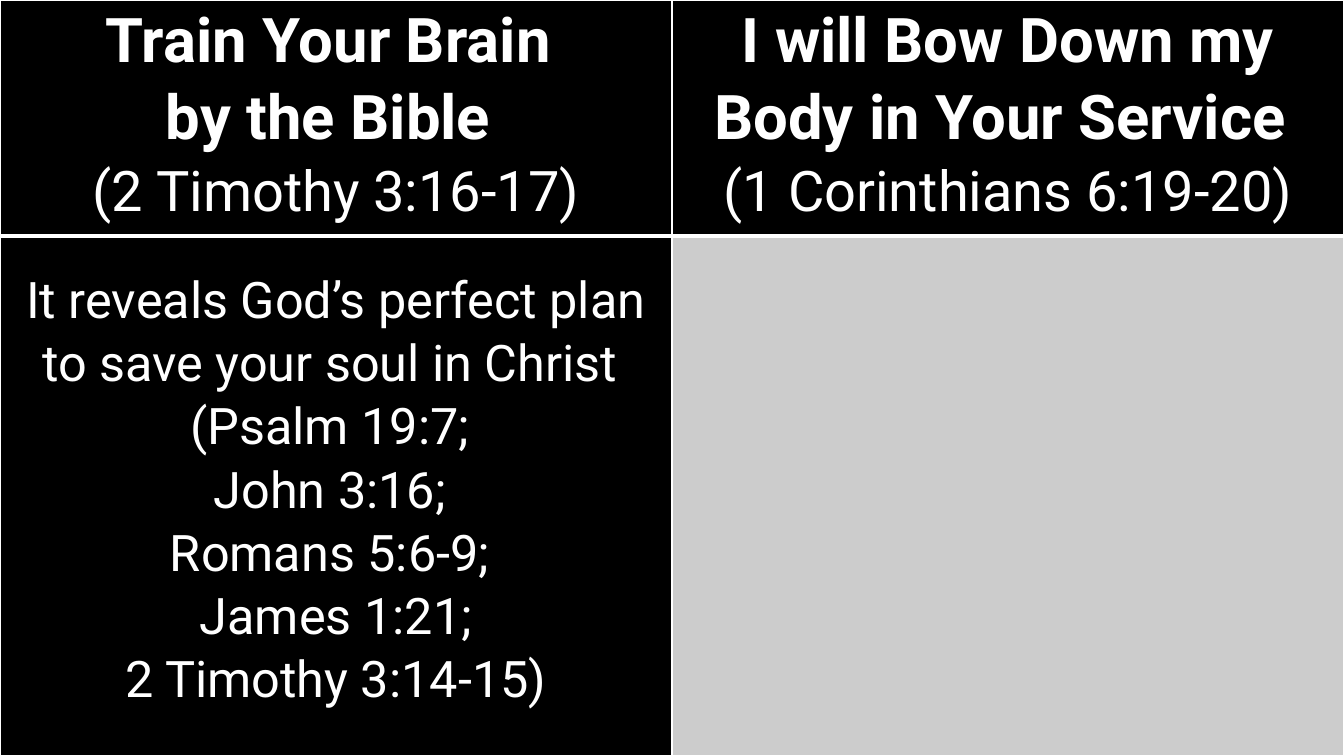
import pptx
import pptx.util
import pptx.dml.color
import pptx.enum.text
import pptx.oxml

# Content: rows of cells, each cell a list of (text, style)
ROWS = [
    [
        [("Train Your Brain ", "head"),
         ("by the Bible ", "head"),
         ("(2 Timothy 3:16-17)", "verse")],
        [("I will Bow Down my Body in Your Service ", "head"),
         ("(1 Corinthians 6:19-20)", "verse")],
    ],
    [
        [("It reveals God’s perfect plan to save your soul in Christ ", "body"),
         ("(Psalm 19:7; ", "body"),
         ("John 3:16; ", "body"),
         ("Romans 5:6-9; ", "body"),
         ("James 1:21;", "body"),
         ("2 Timothy 3:14-15)", "body")],
        [],
    ],
]

# Theme and sizes in px
THEME = {
    "font": "Roboto", "ink": "FFFFFF", "back": "000000", "blank": "CCCCCC",
    "head": (44, True), "verse": (40, False), "body": (36, False),
    "thin": 1, "thick": 3, "lead": 1.07,
}
WIDE, HIGH = 1344, 756
TOPS = [236, HIGH - 236]
PADS = [0, 32]
SIDE = 7
SCALE = 12192000 / WIDE


def px(n):
    return pptx.util.Emu(round(n * SCALE))


def color(name):
    return pptx.dml.color.RGBColor.from_string(THEME[name])


def paint(fill, name):
    fill.solid()
    fill.fore_color.rgb = color(name)


def assign(item, values):
    for key, value in values.items():
        setattr(item, key, value)


def edge(cell, row):
    """Draw the four cell borders, thick between the two rows."""
    props = cell._tc.get_or_add_tcPr()
    heavy = "B" if row == 0 else "T"
    for i, side in enumerate("LRTB"):
        size = THEME["thick" if side == heavy else "thin"]
        props.insert(i, pptx.oxml.parse_xml(
            f'<a:ln{side} xmlns:a="http://schemas.openxmlformats.org/drawingml/2006/main"'
            f' w="{pptx.util.Pt(size)}"><a:solidFill><a:srgbClr val="{THEME["ink"]}"/>'
            f'</a:solidFill></a:ln{side}>'))


def write(cell, lines):
    for i, (text, style) in enumerate(lines):
        para = cell.text_frame.paragraphs[0] if i == 0 else cell.text_frame.add_paragraph()
        assign(para, {"alignment": pptx.enum.text.PP_ALIGN.CENTER,
                      "line_spacing": THEME["lead"]})
        run = para.add_run()
        run.text = text
        size, bold = THEME[style]
        assign(run.font, {"name": THEME["font"], "size": pptx.util.Pt(size), "bold": bold})
        run.font.color.rgb = color("ink")


def main():
    deck = pptx.Presentation()
    assign(deck, {"slide_width": px(WIDE), "slide_height": px(HIGH)})
    slide = deck.slides.add_slide(deck.slide_layouts[6])
    paint(slide.background.fill, "back")

    # Table grid
    count = len(ROWS[0])
    table = slide.shapes.add_table(len(ROWS), count, 0, 0, px(WIDE), px(HIGH)).table
    assign(table, {"first_row": False, "horz_banding": False})
    for col in table.columns:
        col.width = px(WIDE / count)

    # Cells
    for r, cells in enumerate(ROWS):
        table.rows[r].height = px(TOPS[r])
        for c, lines in enumerate(cells):
            cell = table.cell(r, c)
            assign(cell, {"margin_left": px(SIDE), "margin_right": px(SIDE),
                          "margin_top": px(PADS[r]), "margin_bottom": 0})
            paint(cell.fill, "back" if lines else "blank")
            edge(cell, r)
            write(cell, lines)

    deck.save("out.pptx")


if __name__ == "__main__":
    main()
